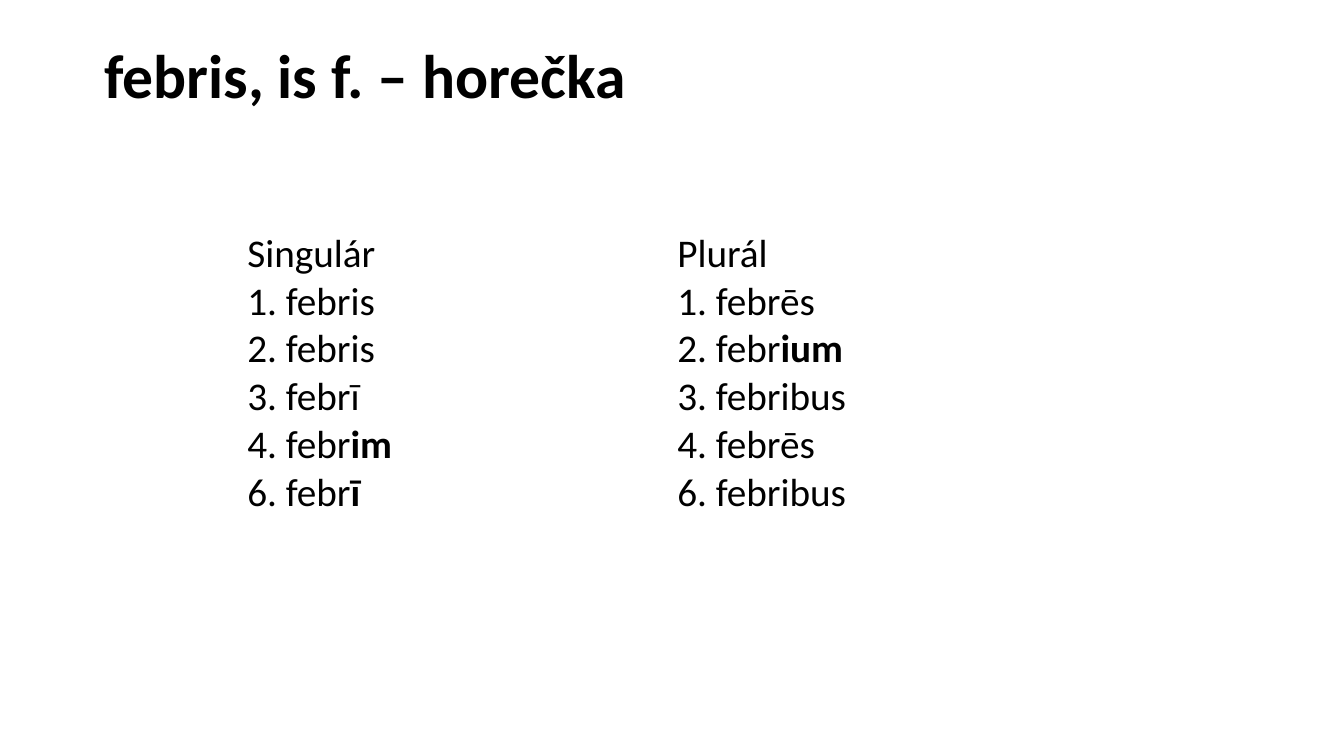
import pptx
import pptx.dml.color
import pptx.enum.text
import pptx.util

BLACK = pptx.dml.color.RGBColor(0, 0, 0)
FONT = "Calibri"
SLIDE_WIDTH = pptx.util.Inches(13.33)
SLIDE_HEIGHT = pptx.util.Inches(7.5)
ROW_HEIGHTS = (0.47, 2.8)

DECLENSION = {
    "Singulár": [("1. febris", ""), ("2. febris", ""), ("3. febrī", ""),
                 ("4. febr", "im"), ("6. febr", "ī")],
    "Plurál": [("1. febrēs", ""), ("2. febr", "ium"), ("3. febribus", ""),
               ("4. febrēs", ""), ("6. febribus", "")],
}


def place(shape, left, top, width, height):
    shape.left, shape.width = int(left * SLIDE_WIDTH), int(width * SLIDE_WIDTH)
    shape.top, shape.height = int(top * SLIDE_HEIGHT), int(height * SLIDE_HEIGHT)


def style_paragraph(paragraph, size):
    paragraph.alignment = pptx.enum.text.PP_ALIGN.LEFT
    paragraph.font.name = FONT
    paragraph.font.size = pptx.util.Pt(size)
    paragraph.font.color.rgb = BLACK


def set_title(slide, text):
    title = slide.shapes.title
    place(title, 0.07, 0.053, 0.86, 0.193)
    frame = title.text_frame
    frame.text = text
    frame.vertical_anchor = pptx.enum.text.MSO_ANCHOR.TOP
    paragraph = frame.paragraphs[0]
    paragraph.line_spacing = 0.9
    style_paragraph(paragraph, 44)
    paragraph.font.bold = True


def fill_cell(cell, lines):
    cell.fill.background()
    cell.margin_left = cell.margin_right = cell.margin_top = cell.margin_bottom = 0
    frame = cell.text_frame
    for index, (stem, ending) in enumerate(lines):
        paragraph = frame.add_paragraph() if index else frame.paragraphs[0]
        style_paragraph(paragraph, 28)
        paragraph.add_run().text = stem
        if ending:
            run = paragraph.add_run()
            run.text = ending
            run.font.bold = True


def add_declension_table(slide, declension):
    frame = slide.shapes.add_table(
        len(ROW_HEIGHTS), len(declension),
        int(0.184 * SLIDE_WIDTH), int(0.304 * SLIDE_HEIGHT),
        int(0.64 * SLIDE_WIDTH), pptx.util.Inches(sum(ROW_HEIGHTS)))
    table = frame.table
    table.first_row = False
    table.horz_banding = False
    for row, height in zip(table.rows, ROW_HEIGHTS):
        row.height = pptx.util.Inches(height)
    for column, (number, forms) in enumerate(declension.items()):
        fill_cell(table.cell(0, column), [(number, "")])
        fill_cell(table.cell(1, column), forms)


def main():
    presentation = pptx.Presentation()
    presentation.slide_width = SLIDE_WIDTH
    presentation.slide_height = SLIDE_HEIGHT
    slide = presentation.slides.add_slide(presentation.slide_layouts[5])
    set_title(slide, "febris, is f. – horečka")
    add_declension_table(slide, DECLENSION)
    presentation.save("out.pptx")


if __name__ == "__main__":
    main()
